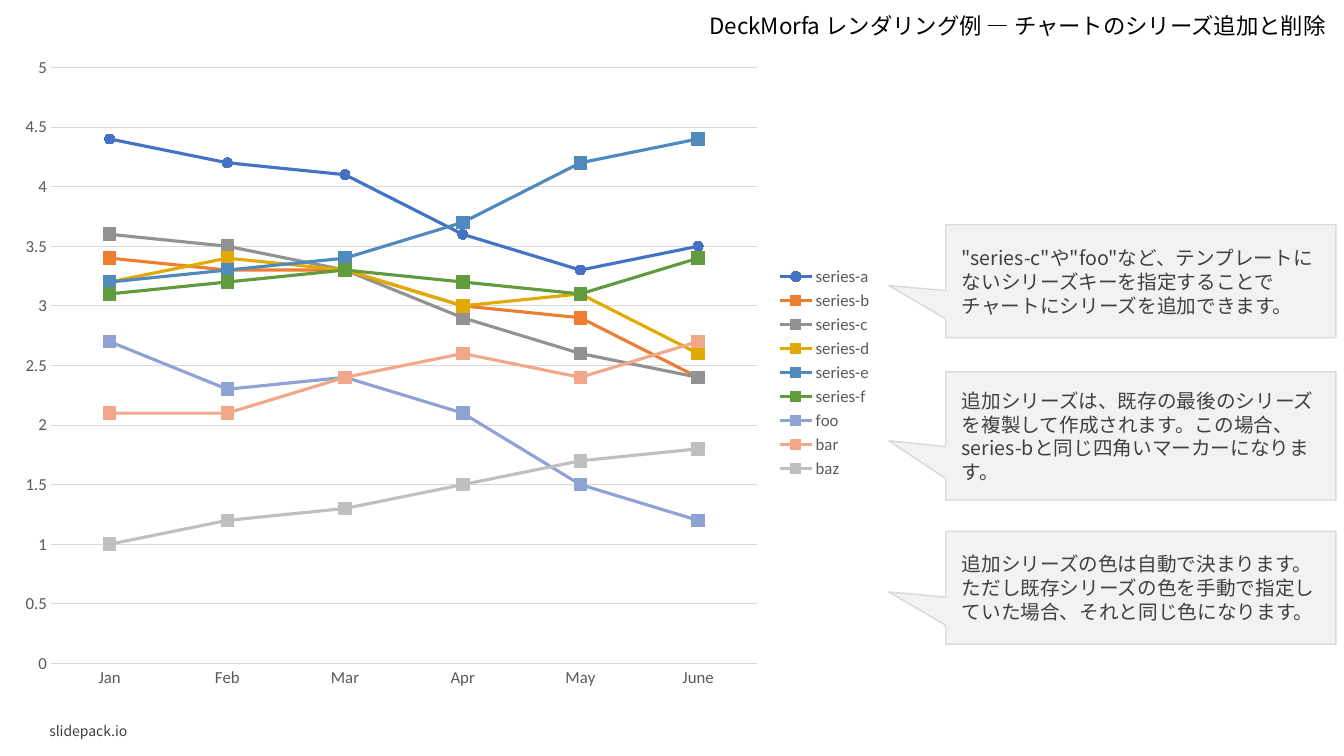
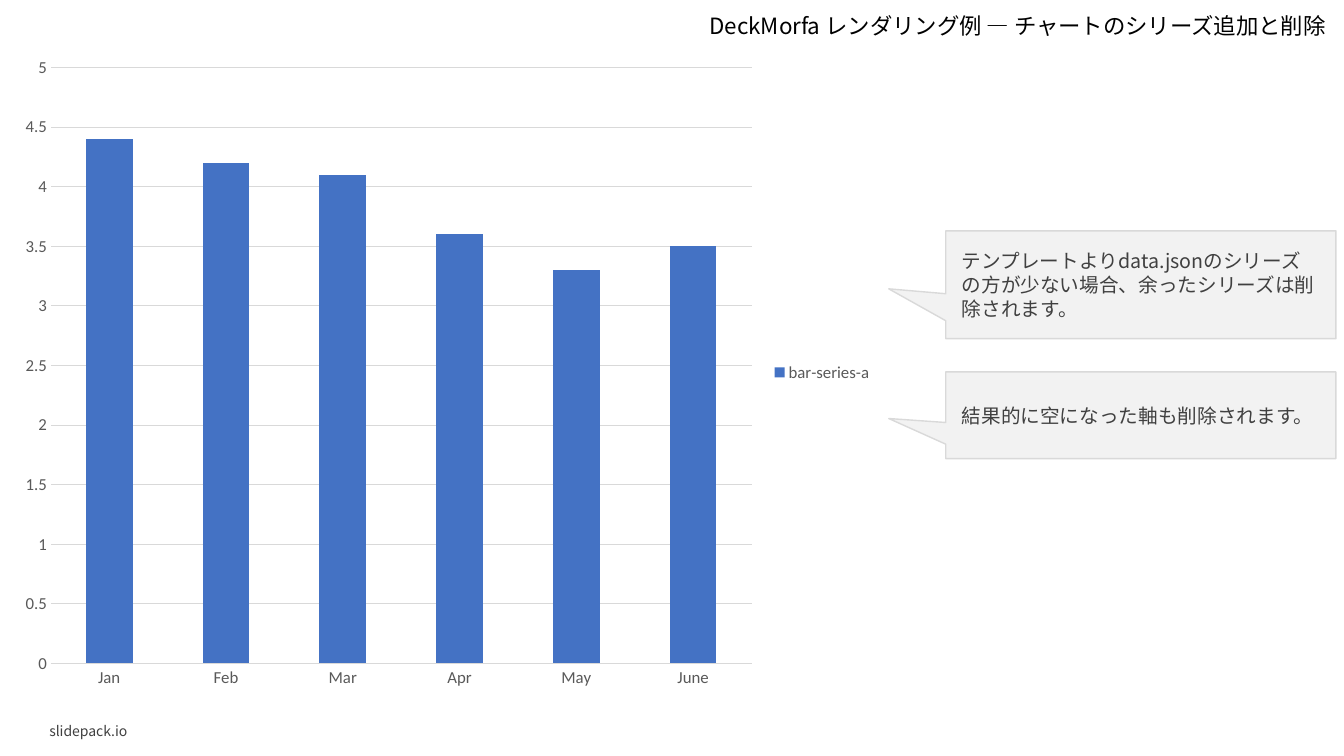
from lxml import etree
from pptx import Presentation
from pptx.chart.data import CategoryChartData
from pptx.dml.color import RGBColor
from pptx.enum.chart import XL_CHART_TYPE, XL_LEGEND_POSITION, XL_MARKER_STYLE, XL_TICK_MARK
from pptx.enum.shapes import MSO_SHAPE
from pptx.enum.text import MSO_ANCHOR, PP_ALIGN
from pptx.oxml.ns import qn
from pptx.util import Inches, Pt

LINE, COLUMN = XL_CHART_TYPE.LINE_MARKERS, XL_CHART_TYPE.COLUMN_CLUSTERED
CIRCLE, SQUARE = XL_MARKER_STYLE.CIRCLE, XL_MARKER_STYLE.SQUARE
NO_TICK = XL_TICK_MARK.NONE
LEGEND_RIGHT = XL_LEGEND_POSITION.RIGHT
CALLOUT = MSO_SHAPE.RECTANGULAR_CALLOUT
TOP, MIDDLE = MSO_ANCHOR.TOP, MSO_ANCHOR.MIDDLE
LEFT, RIGHT = PP_ALIGN.LEFT, PP_ALIGN.RIGHT

TEXT_FONT, CHART_FONT = "Noto Sans CJK JP", "Calibri"
BLACK, DARK, GREY, RULE, PALE = "000000", "404040", "595959", "D9D9D9", "F2F2F2"
BLUE = "4472C4"
LINE_RATIO = 1.22  # line pitch relative to text size

TITLE = "DeckMorfa レンダリング例 ― チャートのシリーズ追加と削除"
FOOTER = "slidepack.io"
TITLE_BOX = (6.59, 0.07, 6.66, 0.37)
FOOTER_BOX = (0.39, 7.12, 2.91, 0.25)
CHART_BOX = (0.08, 0.44, 8.68, 6.51)
CALLOUT_X, CALLOUT_W = 9.38, 3.87

MONTHS = ["Jan", "Feb", "Mar", "Apr", "May", "June"]
LINE_SERIES = [
    ("series-a", BLUE, (4.4, 4.2, 4.1, 3.6, 3.3, 3.5)),
    ("series-b", "ED7D31", (3.4, 3.3, 3.3, 3, 2.9, 2.4)),
    ("series-c", "929292", (3.6, 3.5, 3.3, 2.9, 2.6, 2.4)),
    ("series-d", "E2AA00", (3.2, 3.4, 3.3, 3, 3.1, 2.6)),
    ("series-e", "508ABD", (3.2, 3.3, 3.4, 3.7, 4.2, 4.4)),
    ("series-f", "629A3E", (3.1, 3.2, 3.3, 3.2, 3.1, 3.4)),
    ("foo", "8FA2D4", (2.7, 2.3, 2.4, 2.1, 1.5, 1.2)),
    ("bar", "F1A78A", (2.1, 2.1, 2.4, 2.6, 2.4, 2.7)),
    ("baz", "BFBFBF", (1, 1.2, 1.3, 1.5, 1.7, 1.8)),
]
BAR_SERIES = [("bar-series-a", BLUE, LINE_SERIES[0][2])]

# Each callout: top, height, text
LINE_NOTES = [
    (2.23, 1.12, '"series-c"や"foo"など、テンプレートにないシリーズキーを指定することでチャートにシリーズを追加できます。'),
    (3.69, 1.27, "追加シリーズは、既存の最後のシリーズを複製して作成されます。この場合、series-bと同じ四角いマーカーになります。"),
    (5.27, 1.12, "追加シリーズの色は自動で決まります。ただし既存シリーズの色を手動で指定していた場合、それと同じ色になります。"),
]
BAR_NOTES = [
    (2.29, 1.07, "テンプレートよりdata.jsonのシリーズの方が少ない場合、余ったシリーズは削除されます。"),
    (3.69, 0.86, "結果的に空になった軸も削除されます。"),
]


def rgb(value):
    return RGBColor.from_string(value)


def inches(box):
    return [Inches(v) for v in box]


def set_attrs(obj, values):
    for name, value in values.items():
        setattr(obj, name, value)


def style_font(font, size, color, name=CHART_FONT):
    set_attrs(font, {"size": Pt(size), "name": name})
    font.color.rgb = rgb(color)


def paint(fmt, color):
    fmt.fill.solid()
    fmt.fill.fore_color.rgb = rgb(color)


def rule(line, color, width):
    line.color.rgb = rgb(color)
    line.width = Pt(width)


def write(sp, text, size, color, align=LEFT, anchor=MIDDLE, margins=(0.1, 0.05, 0.1, 0.05)):
    tf = sp.text_frame
    left, top, right, bottom = inches(margins)
    set_attrs(tf, {"word_wrap": True, "vertical_anchor": anchor,
                   "margin_left": left, "margin_top": top,
                   "margin_right": right, "margin_bottom": bottom})
    p = tf.paragraphs[0]
    set_attrs(p, {"alignment": align, "line_spacing": Pt(size * LINE_RATIO)})
    r = p.add_run()
    r.text = text
    style_font(r.font, size, color, TEXT_FONT)
    # East Asian typeface
    etree.SubElement(r.font._element, qn("a:ea")).set("typeface", TEXT_FONT)


def add_frame(s):
    """Title and footer shared by all slides."""
    write(s.shapes.add_textbox(*inches(FOOTER_BOX)), FOOTER, 10, DARK)
    write(s.shapes.add_textbox(*inches(TITLE_BOX)), TITLE, 16, BLACK, RIGHT, TOP)


def add_callouts(s, notes, right_margin):
    for top, height, text in notes:
        sp = s.shapes.add_shape(CALLOUT, *inches((CALLOUT_X, top, CALLOUT_W, height)))
        sp.shadow.inherit = False
        sp.adjustments[0], sp.adjustments[1] = -0.646, 0.038
        paint(sp, PALE)
        rule(sp.line, RULE, 1)
        write(sp, text, 14, DARK, margins=(0.16, 0.16, right_margin, 0.16))


def style_line_series(series, color, marker, size):
    series.smooth = False
    rule(series.format.line, color, 2.25)
    set_attrs(series.marker, {"style": marker, "size": size})
    paint(series.marker.format, color)
    series.marker.format.line.fill.background()


def add_month_chart(s, box, kind, rows):
    data = CategoryChartData()
    data.categories = MONTHS
    for name, _, values in rows:
        data.add_series(name, values)
    chart = s.shapes.add_chart(kind, *inches(box), data).chart
    set_attrs(chart, {"has_title": False, "has_legend": True})
    style_font(chart.font, 10, BLACK)

    # Legend
    set_attrs(chart.legend, {"position": LEGEND_RIGHT, "include_in_layout": False})
    style_font(chart.legend.font, 12, GREY)

    # Axes
    for axis in (chart.category_axis, chart.value_axis):
        set_attrs(axis, {"major_tick_mark": NO_TICK, "minor_tick_mark": NO_TICK})
        style_font(axis.tick_labels.font, 12, GREY)
    rule(chart.category_axis.format.line, RULE, 0.75)
    axis = chart.value_axis
    set_attrs(axis, {"minimum_scale": 0, "maximum_scale": 5, "major_unit": 0.5,
                     "has_major_gridlines": True})
    axis.format.line.fill.background()
    rule(axis.major_gridlines.format.line, RULE, 0.75)

    # Series
    plot = chart.plots[0]
    plot.vary_by_categories = False
    if kind == COLUMN:
        plot.gap_width = 150
    for i, (series, (_, color, _)) in enumerate(zip(plot.series, rows)):
        if kind == LINE:
            style_line_series(series, color, *((SQUARE, 9) if i else (CIRCLE, 7)))
        else:
            paint(series.format, color)


def add_chart_slide(prs, kind, rows, notes, right_margin):
    s = prs.slides.add_slide(prs.slide_layouts[6])
    add_frame(s)
    add_month_chart(s, CHART_BOX, kind, rows)
    add_callouts(s, notes, right_margin)


def main():
    prs = Presentation()
    set_attrs(prs, {"slide_width": Inches(13.33), "slide_height": Inches(7.5)})
    add_chart_slide(prs, LINE, LINE_SERIES, LINE_NOTES, 0.12)
    add_chart_slide(prs, COLUMN, BAR_SERIES, BAR_NOTES, 0.16)
    prs.save("out.pptx")


if __name__ == "__main__":
    main()
